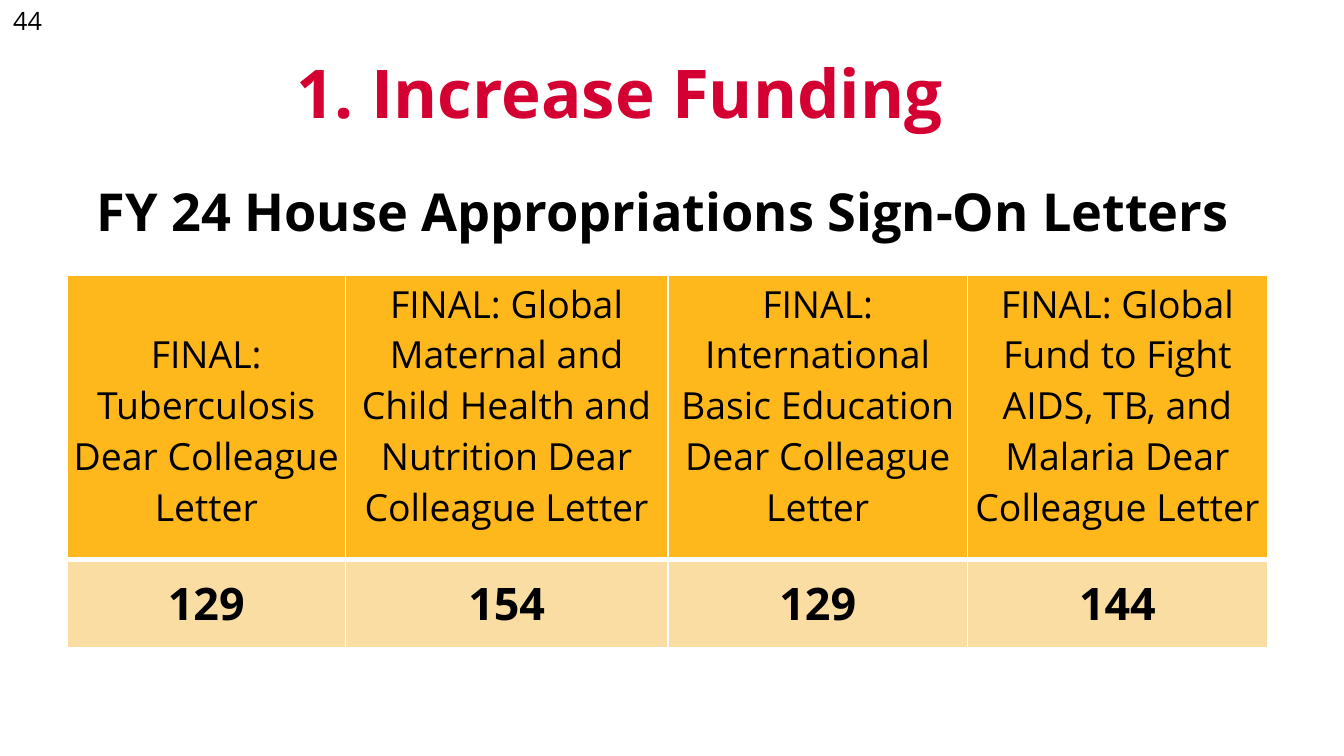
from pptx import Presentation
from pptx import util as u
from pptx.dml.color import RGBColor
from pptx.enum import text
from pptx.oxml import parse_xml
from pptx.oxml.ns import nsdecls

RED, BLACK, WHITE = "D50032", "000000", "FFFFFF"
GOLD, CREAM = "FFB81C", "F9DDA3"


def add_run(paragraph, words, size, color, bold=False):
    run = paragraph.add_run()
    run.text = words
    run.font.name = "Open Sans"
    run.font.size = u.Pt(size)
    run.font.bold = bold
    run.font.color.rgb = RGBColor.from_string(color)


def place(shape, left, top, width, height):
    shape.left, shape.top = u.Inches(left), u.Inches(top)
    shape.width, shape.height = u.Inches(width), u.Inches(height)
    shape.text_frame.word_wrap = True
    shape.text_frame.auto_size = text.MSO_AUTO_SIZE.NONE


# Widescreen slide, 16 by 9
presentation = Presentation()
presentation.slide_width = u.Inches(10)
presentation.slide_height = u.Inches(10 * 9 / 16)
slide = presentation.slides.add_slide(presentation.slide_layouts[1])
title, body = slide.placeholders
margin = 0.5

# Page number
number = slide.shapes.add_textbox(0, 0, 0, 0)
place(number, 0, -0.01, margin, 0.3)
add_run(number.text_frame.paragraphs[0], "44", 13.5, BLACK)

# Title
place(title, 1.34, 0.21, 6.54, 0.94)
title.text_frame.vertical_anchor = text.MSO_ANCHOR.MIDDLE
paragraph = title.text_frame.paragraphs[0]
paragraph.alignment = text.PP_ALIGN.CENTER
add_run(paragraph, "1. Increase Funding", 36, RED, True)

# Subtitle
place(body, margin, 1.28, 9, 0.77)
body.text_frame.vertical_anchor = text.MSO_ANCHOR.TOP
paragraph = body.text_frame.paragraphs[0]
properties = paragraph._p.get_or_add_pPr()
properties.set("marL", str(u.Inches(0.12)))
properties.set("indent", "0")
properties.append(parse_xml(f"<a:buNone {nsdecls('a')}/>"))
paragraph.space_before = u.Pt(0)
add_run(paragraph, "FY 24 House Appropriations Sign-On Letters", 28, BLACK, True)

# Table of letters and their signature counts
letters = [
    ("Tuberculosis", "129", 2.07),
    ("Global Maternal and Child Health and Nutrition", "154", 2.4),
    ("International Basic Education", "129", 2.23),
    ("Global Fund to Fight AIDS, TB, and Malaria", "144", 2.23),
]
# Height, fill, text size, bold, top and bottom insets, top and bottom borders
row_styles = [
    (2.07, GOLD, 20, False, 0.02, 0.2, 1, 3),
    (0.62, CREAM, 24, True, 0.1, 0.1, 3, 1),
]
table = slide.shapes.add_table(
    len(row_styles), len(letters), u.Inches(margin), u.Inches(2.05),
    u.Inches(8.93), u.Inches(2.69)).table

for column, (topic, count, width) in enumerate(letters):
    table.columns[column].width = u.Inches(width)
    words = (f"FINAL: {topic} Dear Colleague Letter", count)
    for row, style in enumerate(row_styles):
        height, fill, size, bold, inset_top, inset_bottom, line_top, line_bottom = style
        table.rows[row].height = u.Inches(height)
        cell = table.cell(row, column)
        cell.margin_left = cell.margin_right = u.Inches(0.03)
        cell.margin_top = u.Inches(inset_top)
        cell.margin_bottom = u.Inches(inset_bottom)
        cell.vertical_anchor = text.MSO_ANCHOR.BOTTOM
        # Borders come before the fill in the cell properties
        for side, points in zip("LRTB", (1, 1, line_top, line_bottom)):
            cell._tc.get_or_add_tcPr().append(parse_xml(
                f'<a:ln{side} {nsdecls("a")} w="{u.Pt(points)}"><a:solidFill>'
                f'<a:srgbClr val="{WHITE}"/></a:solidFill></a:ln{side}>'))
        cell.fill.solid()
        cell.fill.fore_color.rgb = RGBColor.from_string(fill)
        paragraph = cell.text_frame.paragraphs[0]
        paragraph.alignment = text.PP_ALIGN.CENTER
        add_run(paragraph, words[row], size, BLACK, bold)

presentation.save("out.pptx")
